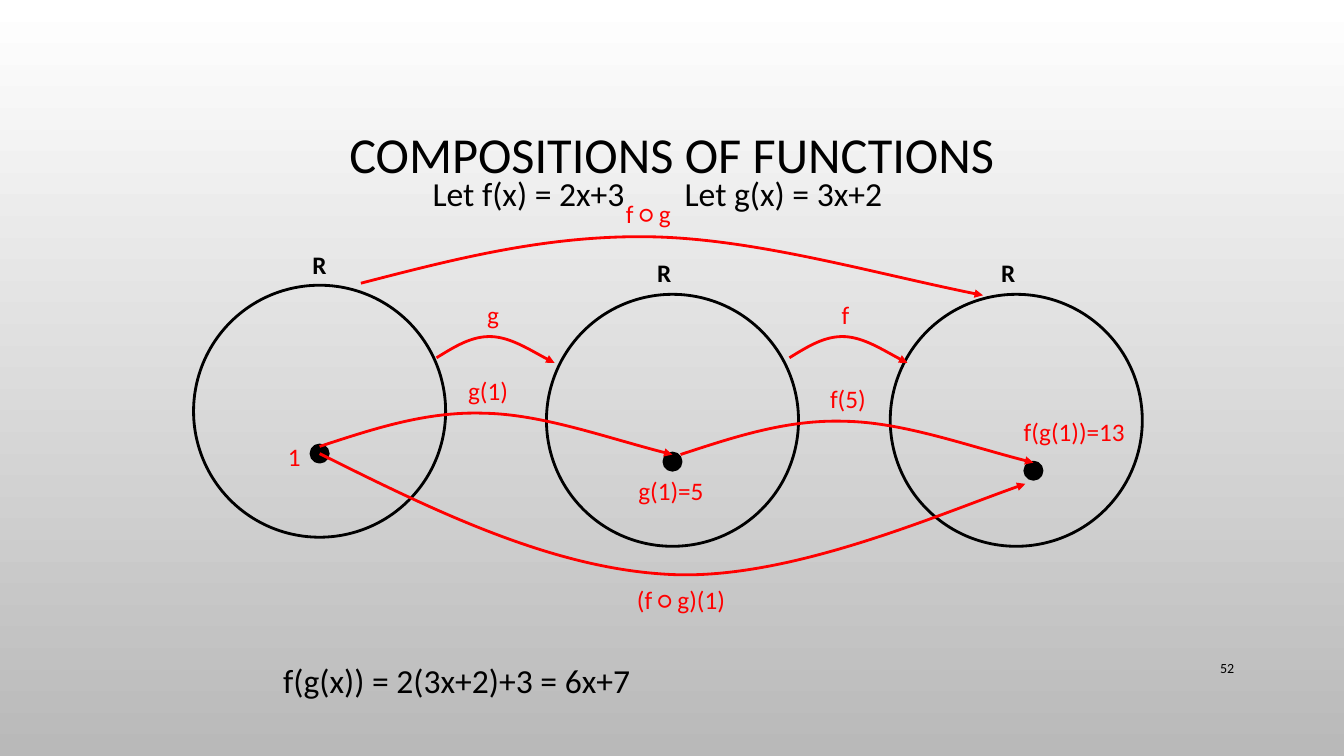
from lxml import etree
from pptx import Presentation
from pptx.dml.color import RGBColor
from pptx.enum.shapes import MSO_SHAPE
from pptx.enum.text import MSO_ANCHOR, MSO_AUTO_SIZE, PP_ALIGN
from pptx.oxml.ns import qn
from pptx.util import Inches, Pt

BLACK = RGBColor(0x00, 0x00, 0x00)
RED = RGBColor(0xFF, 0x00, 0x00)
WHITE = RGBColor(0xFF, 0xFF, 0xFF)
GRAY = RGBColor(0xB9, 0xB9, 0xB9)
OVAL = MSO_SHAPE.OVAL
LEFT, CENTER, RIGHT = PP_ALIGN.LEFT, PP_ALIGN.CENTER, PP_ALIGN.RIGHT
TOP, MIDDLE = MSO_ANCHOR.TOP, MSO_ANCHOR.MIDDLE
FIT_SHAPE, NO_FIT = MSO_AUTO_SIZE.SHAPE_TO_FIT_TEXT, MSO_AUTO_SIZE.NONE


class MappingSlide:
    font_name = "Calibri"
    line_width = Pt(2)

    def __init__(self, slide):
        self.slide = slide

    def background(self, top_color, bottom_color):
        fill = self.slide.background.fill
        fill.gradient()
        fill.gradient_angle = 270
        for stop, color in zip(fill.gradient_stops, (top_color, bottom_color)):
            stop.color.rgb = color

    def text(self, text, left, top, width, height=0.4, size=18, color=RED, bold=False,
             align=CENTER, anchor=TOP, wrap=False, fit=FIT_SHAPE, spacing=None):
        box = self.slide.shapes.add_textbox(
            Inches(left), Inches(top), Inches(width), Inches(height))
        frame = box.text_frame
        frame.word_wrap = wrap
        frame.auto_size = fit
        frame.vertical_anchor = anchor
        paragraph = frame.paragraphs[0]
        paragraph.alignment = align
        if spacing:
            paragraph.line_spacing = spacing
        run = paragraph.add_run()
        run.text = text
        run.font.name = self.font_name
        run.font.size = Pt(size)
        run.font.bold = bold
        run.font.color.rgb = color

    def outline(self, shape, color):
        shape.shadow.inherit = False
        shape.line.color.rgb = color
        shape.line.width = self.line_width

    def circle(self, center_x, center_y, diameter, filled=False):
        shape = self.slide.shapes.add_shape(
            OVAL, Inches(center_x - diameter / 2), Inches(center_y - diameter / 2),
            Inches(diameter), Inches(diameter))
        self.outline(shape, BLACK)
        if filled:
            shape.fill.solid()
            shape.fill.fore_color.rgb = BLACK
        else:
            shape.fill.background()

    def curved_arrow(self, points, shift_x=0, shift_y=0):
        start, *rest = [(Inches(x + shift_x), Inches(y + shift_y)) for x, y in points]
        builder = self.slide.shapes.build_freeform(*start)
        builder.add_line_segments(rest, close=False)
        shape = builder.convert_to_shape()
        self.outline(shape, RED)
        shape.fill.background()
        segments = list(shape.element.iter(qn("a:lnTo")))
        path = segments[0].getparent()
        for index in range(0, len(segments), 3):
            curve = etree.SubElement(path, qn("a:cubicBezTo"))
            for segment in segments[index:index + 3]:
                curve.append(segment[0])
                path.remove(segment)
        line = shape.element.spPr.find(qn("a:ln"))
        etree.SubElement(line, qn("a:tailEnd"), type="triangle")


SETS = [(3.17, 4.08), (6.67, 4.17), (10.08, 4.17)]
DOTS = [(3.17, 4.5), (6.67, 4.58), (10.25, 4.67)]
SET_NAMES = [(3, 2.42), (6.42, 2.5), (9.83, 2.5)]

SHORT_ARC = [(4.33, 3.55), (4.51, 3.44), (4.68, 3.33), (4.88, 3.34),
             (5.07, 3.35), (5.3, 3.5), (5.5, 3.6)]
VALUE_ARC = [(3.17, 4.43), (3.69, 4.26), (4.22, 4.08), (4.8, 4.1),
             (5.38, 4.11), (6.06, 4.36), (6.67, 4.51)]
UPPER_ARC = [(3.58, 2.81), (4.51, 2.57), (5.43, 2.33), (6.46, 2.35),
             (7.49, 2.37), (8.69, 2.72), (9.75, 2.93)]
LOWER_ARC = [(3.17, 4.5), (4.33, 5.08), (5.5, 5.65), (6.67, 5.7),
             (7.83, 5.75), (9.36, 5.08), (10.17, 4.8)]

ARROW_LABELS = [
    ("g", 4.72, 2.92, 0.34),
    ("f", 8.24, 2.92, 0.29),
    ("f ○ g", 6.07, 1.92, 0.72),
    ("g(1)", 4.53, 3.67, 0.62),
    ("f(5)", 8.12, 3.75, 0.58),
    ("(f ○ g)(1)", 6.17, 5.75, 1.17),
    ("g(1)=5", 6.19, 4.67, 0.93),
    ("f(g(1))=13", 10, 4.08, 1.31),
    ("1", 2.75, 4.33, 0.34),
]


def main():
    presentation = Presentation()
    presentation.slide_width = Inches(13.33)
    presentation.slide_height = Inches(7.5)
    page = MappingSlide(presentation.slides.add_slide(presentation.slide_layouts[6]))

    page.background(WHITE, GRAY)
    page.text("52", 11.5, 6.43, 0.84, size=10, color=BLACK, align=RIGHT,
              anchor=MIDDLE, wrap=True, fit=NO_FIT)
    page.text("COMPOSITIONS OF FUNCTIONS", 1, 0.68, 11.33, 1.75, size=36, color=BLACK,
              anchor=MIDDLE, wrap=True, fit=NO_FIT, spacing=0.9)

    for center in SETS:
        page.circle(*center, 2.5)
    for center in DOTS:
        page.circle(*center, 0.17, filled=True)

    page.curved_arrow(SHORT_ARC)
    page.curved_arrow(SHORT_ARC, shift_x=3.5)
    page.curved_arrow(VALUE_ARC)
    page.curved_arrow(VALUE_ARC, shift_x=3.58, shift_y=0.08)
    page.curved_arrow(UPPER_ARC)
    page.curved_arrow(LOWER_ARC)

    for label in ARROW_LABELS:
        page.text(*label)
    for left, top in SET_NAMES:
        page.text("R", left, top, 0.38, color=BLACK, bold=True, align=LEFT, wrap=True)

    page.text("Let f(x) = 2x+3\t\tLet g(x) = 3x+2", 3.3, 1.67, 6.44, 0.5, size=24, color=BLACK)
    page.text("f(g(x)) = 2(3x+2)+3 = 6x+7", 2.45, 6.5, 4.16, 0.5, size=24, color=BLACK)

    presentation.save("out.pptx")


if __name__ == "__main__":
    main()
